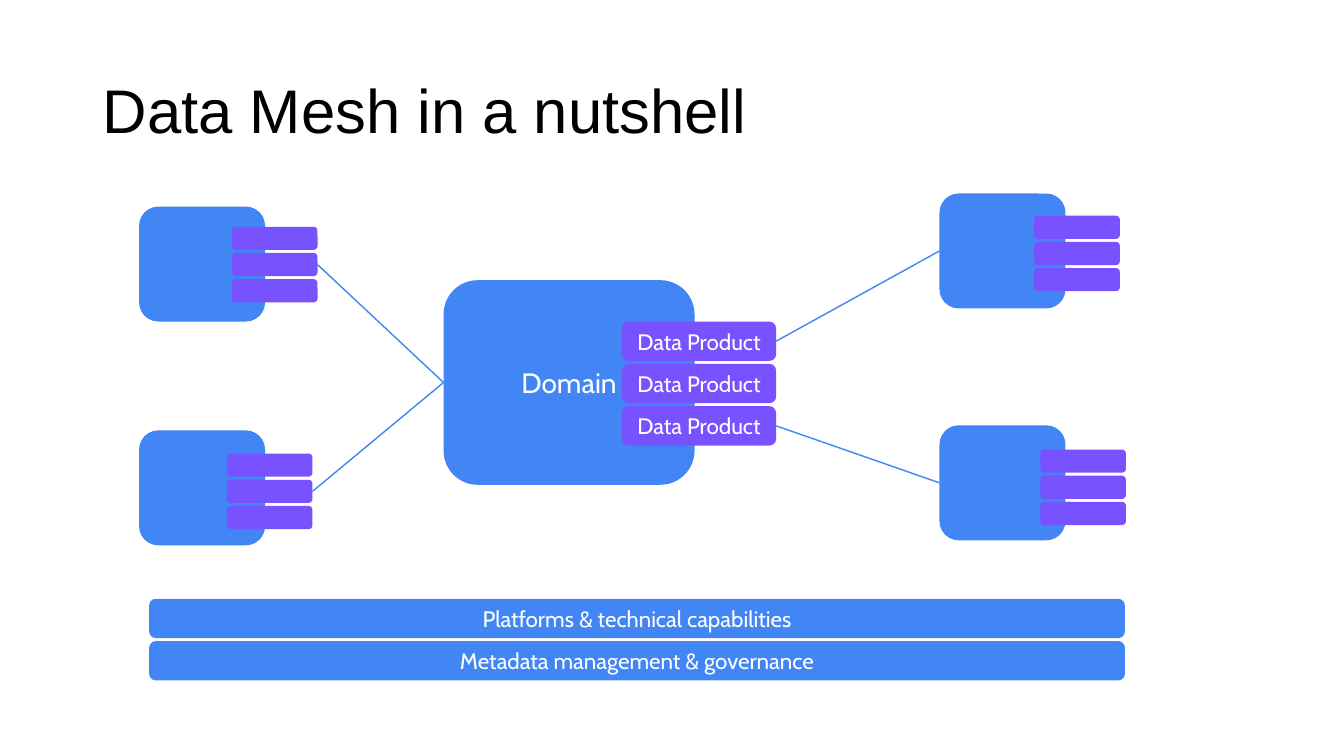
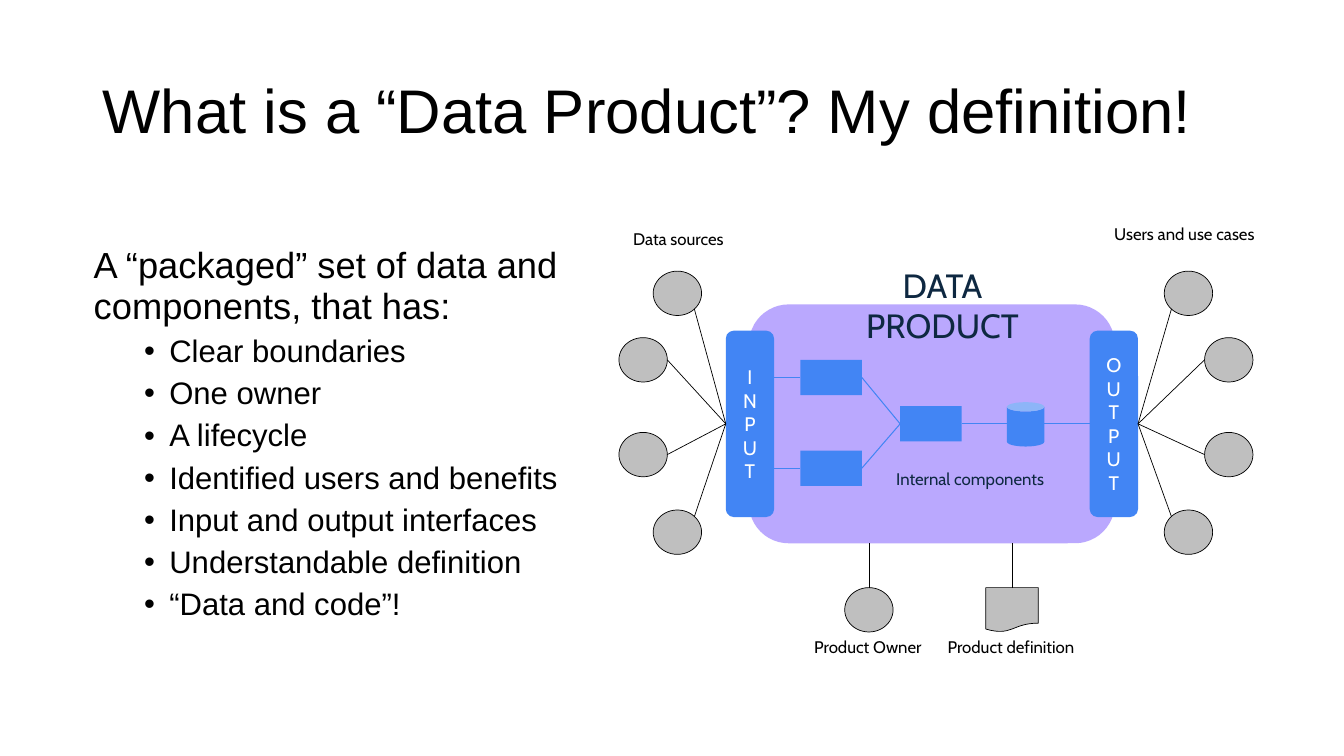
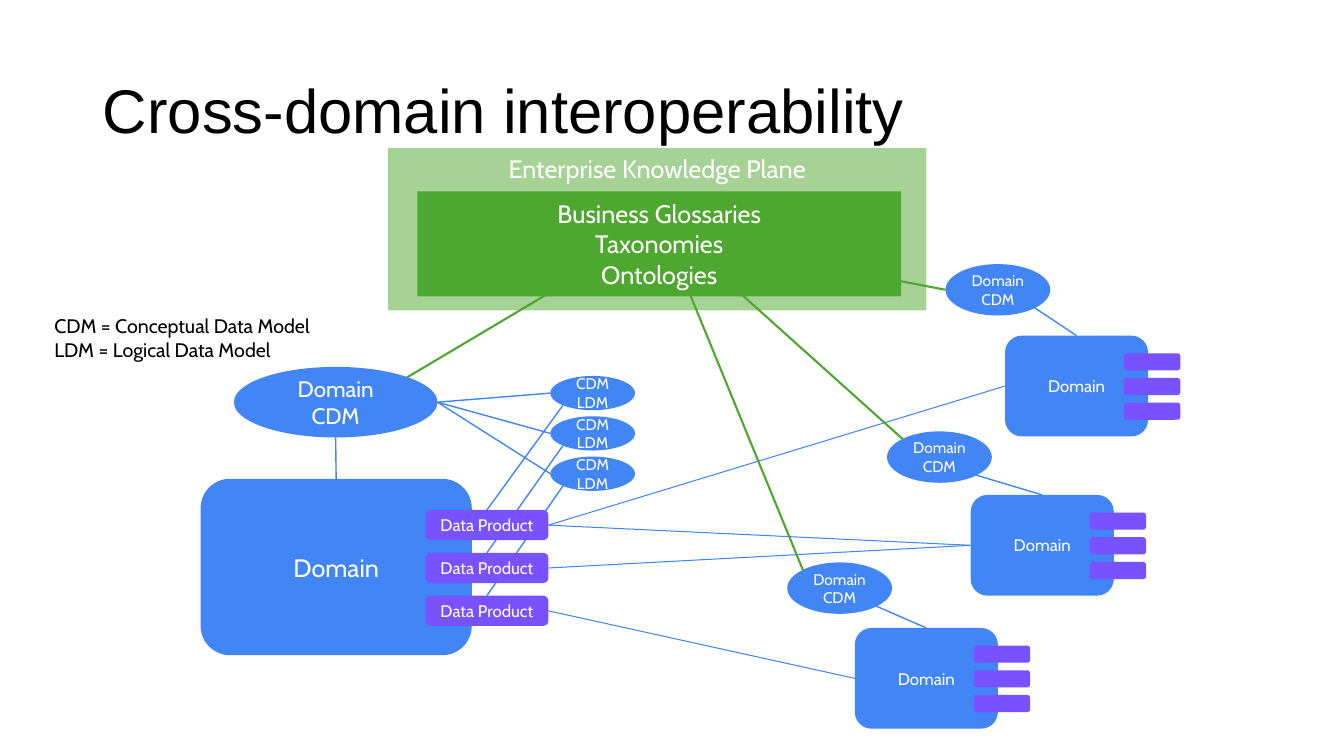
from typing import NamedTuple

from lxml.etree import SubElement
from pptx import Presentation
from pptx.dml.color import RGBColor
from pptx.enum.shapes import MSO_CONNECTOR, MSO_SHAPE as SHAPE
from pptx.enum.text import MSO_ANCHOR as ANCHOR, MSO_AUTO_SIZE as AUTO_SIZE, PP_ALIGN as ALIGN
from pptx.oxml.ns import qn
from pptx.util import Inches, Pt

COLORS = {
    "blue": "4285F4", "purple": "7752FE", "green": "4EA72E", "gray": "BFBFBF",
    "navy": "0E2841", "black": "000000", "white": "FFFFFF",
}
HEADING_FONT, LABEL_FONT = "Arial", "Cabin"
GRID = Inches(0.1)
COLUMNS, ROWS = 133.33, 75
NEAR, FAR = 0.15, 0.85
TITLE_LAYOUT, CONTENT_LAYOUT = 5, 1


def grid(cells):
    return round(cells * GRID)


class Box(NamedTuple):
    left: float
    top: float
    width: float
    height: float

    def at(self, x, y):
        return self.left + x * self.width, self.top + y * self.height

    def rows(self, count, gap):
        height = (self.height - gap * (count - 1)) / count
        return [Box(self.left, self.top + i * (height + gap), self.width, height)
                for i in range(count)]

    def offset(self, left, top, width, height):
        return Box(self.left + left, self.top + top, width, height)

    def emu(self):
        return [grid(value) for value in self]


TITLE_BOX = Box(9.2, 4, 115, 14.5)


def rgb(name):
    return RGBColor.from_string(COLORS[name])


def set_bullet(paragraph, bullet, margin, indent):
    properties = paragraph._p.get_or_add_pPr()
    properties.set("marL", str(grid(margin)))
    properties.set("indent", str(grid(indent)))
    if bullet:
        SubElement(properties, qn("a:buChar")).set("char", bullet)
    else:
        SubElement(properties, qn("a:buNone"))


def write(paragraph, text, size=12, color="white", font=LABEL_FONT,
          align=ALIGN.CENTER, spacing=1.0, before=0):
    paragraph.alignment = align
    paragraph.line_spacing = spacing
    paragraph.space_before = Pt(before)
    run = paragraph.add_run()
    run.text = text
    run.font.size = Pt(size)
    run.font.name = font
    run.font.color.rgb = rgb(color)


def fill_frame(frame, text, anchor=ANCHOR.MIDDLE, **text_format):
    frame.word_wrap = True
    frame.auto_size = AUTO_SIZE.NONE
    frame.vertical_anchor = anchor
    for index, line in enumerate(text.split("\n")):
        paragraph = frame.add_paragraph() if index else frame.paragraphs[0]
        write(paragraph, line, **text_format)


def draw(shapes, kind, box, fill, text="", outline=None, opacity=None, **text_format):
    shape = shapes.add_shape(kind, *box.emu())
    shape.shadow.inherit = False
    shape.fill.solid()
    shape.fill.fore_color.rgb = rgb(fill)
    if opacity:
        color = shape._element.spPr.find(qn("a:solidFill"))[0]
        SubElement(color, qn("a:alpha")).set("val", str(opacity * 1000))
    if outline:
        shape.line.color.rgb = rgb(outline)
        shape.line.width = Pt(0.5)
    else:
        shape.line.fill.background()
    if text:
        fill_frame(shape.text_frame, text, **text_format)
    return shape


def label(shapes, box, text, **text_format):
    frame = shapes.add_textbox(*box.emu()).text_frame
    fill_frame(frame, text, anchor=ANCHOR.TOP, **text_format)


def link(shapes, start, end, color="blue", width=1):
    ends = [grid(value) for value in (*start, *end)]
    connector = shapes.add_connector(MSO_CONNECTOR.STRAIGHT, *ends)
    connector.line.color.rgb = rgb(color)
    connector.line.width = Pt(width)
    SubElement(connector._element.spPr, qn("a:effectLst"))


def titled_slide(presentation, title, layout=TITLE_LAYOUT):
    slide = presentation.slides.add_slide(presentation.slide_layouts[layout])
    shape = slide.shapes.title
    shape.left, shape.top, shape.width, shape.height = TITLE_BOX.emu()
    fill_frame(shape.text_frame, title, size=44, color="black", font=HEADING_FONT,
               align=ALIGN.LEFT, spacing=0.9)
    return slide


def domain(shapes, box, products, text="", size=12, product_text="", product_size=12):
    draw(shapes, SHAPE.ROUNDED_RECTANGLE, box, "blue", text, size=size)
    for product in products:
        draw(shapes, SHAPE.ROUNDED_RECTANGLE, product, "purple", product_text,
             size=product_size)


def mesh_slide(presentation):
    shapes = titled_slide(presentation, "Data Mesh in a nutshell").shapes
    center = Box(44, 27.8, 24.9, 20.3)
    center_products = Box(61.7, 31.9, 15.3, 12.3).rows(3, 0.3)
    domain(shapes, center, center_products, "Domain", 20, "Data Product", 16)

    neighbors = [
        (13.8, 20.5, 9.2, 2), (13.8, 42.7, 8.7, 2.3),
        (93.2, 19.2, 9.4, 2.2), (93.2, 42.2, 10, 2.4),
    ]
    boxes, stacks = [], []
    for left, top, shift, drop in neighbors:
        box = Box(left, top, 12.5, 11.4)
        stack = box.offset(shift, drop, 8.5, 7.5).rows(3, 0.3)
        domain(shapes, box, stack)
        boxes.append(box)
        stacks.append(stack)
    for stack in stacks[:2]:
        link(shapes, stack[1].at(1, 0.5), center.at(0, 0.5))
    for product, box in zip(center_products[::2], boxes[2:]):
        link(shapes, product.at(1, 0.5), box.at(0, 0.5))

    foundations = ["Platforms & technical capabilities", "Metadata management & governance"]
    for row, text in zip(Box(14.8, 59.4, 96.8, 8.1).rows(2, 0.3), foundations):
        draw(shapes, SHAPE.ROUNDED_RECTANGLE, row, "blue", text, size=16)


def definition_text(slide, box):
    body = slide.placeholders[1]
    body.left, body.top, body.width, body.height = box.emu()
    frame = body.text_frame
    frame.word_wrap = True
    frame.auto_size = AUTO_SIZE.NONE
    shared = dict(color="black", font=HEADING_FONT, align=ALIGN.LEFT, spacing=0.94)
    intro = frame.paragraphs[0]
    set_bullet(intro, None, 0, 0)
    write(intro, "A “packaged” set of data and components, that has:", size=25.9, **shared)
    for item in ["Clear boundaries", "One owner", "A lifecycle",
                 "Identified users and benefits", "Input and output interfaces",
                 "Understandable definition", "“Data and code”!"]:
        paragraph = frame.add_paragraph()
        paragraph.level = 1
        set_bullet(paragraph, "•", 7.5, -2.5)
        write(paragraph, item, size=22.2, before=5, **shared)


def circle_fan(shapes, box, hub, hub_on_right):
    inner, outer = box.width - 4.8, 0
    if not hub_on_right:
        inner, outer = outer, inner
    side = 1 if hub_on_right else 0
    corner = FAR if hub_on_right else NEAR
    for left, top, anchor in [(inner, 0, (corner, FAR)), (outer, 6.6, (side, 0.5)),
                              (outer, 16, (side, 0.5)), (inner, 23.7, (corner, NEAR))]:
        circle = box.offset(left, top, 4.8, 4.4)
        draw(shapes, SHAPE.OVAL, circle, "gray", outline="black")
        link(shapes, hub, circle.at(*anchor), "black", 0.5)


def product_core(shapes, box):
    draw(shapes, SHAPE.ROUNDED_RECTANGLE, box, "purple", opacity=50)
    label(shapes, box.offset(6.6, -4.4, 25.2, 5), "DATA PRODUCT", size=24, color="navy")
    ports = [box.offset(left, 2.6, 4.8, 18.5) for left in (-2.3, 33.8)]
    for port, text in zip(ports, ["INPUT", "OUTPUT"]):
        shape = draw(shapes, SHAPE.ROUNDED_RECTANGLE, port, "blue", text, size=14)
        shape._element.txBody.bodyPr.set("vert", "wordArtVert")

    steps = [box.offset(left, top, 6.1, 3.5) for left, top in
             [(5.1, 5.5), (5.1, 14.5), (15, 10.1)]]
    for step in steps:
        draw(shapes, SHAPE.RECTANGLE, step, "blue")
    merge = steps[2]
    store = box.offset(25.6, 9.7, 3.7, 4.4)
    draw(shapes, SHAPE.CAN, store, "blue")
    for step in steps[:2]:
        left, middle = step.at(0, 0.5)
        link(shapes, (ports[0].at(1, 0)[0], middle), (left, middle), width=0.75)
        link(shapes, step.at(1, 0.5), merge.at(0, 0.5), width=0.75)
    middle = merge.at(0, 0.5)[1]
    for start, end in [(merge, store), (store, ports[1])]:
        link(shapes, (start.at(1, 0)[0], middle), (end.left, middle), width=0.75)
    label(shapes, box.offset(13.1, 15.8, 17.7, 3), "Internal components", color="navy")

    for kind, left, width, text, text_left in [
            (SHAPE.OVAL, 9.5, 4.8, "Product Owner", 3.7),
            (SHAPE.FLOWCHART_DOCUMENT, 23.5, 5.2, "Product definition", 17.9)]:
        symbol = box.offset(left, 28.1, width, 4.4)
        draw(shapes, kind, symbol, "gray", outline="black")
        x, y = symbol.at(0.5, 0)
        link(shapes, (x, box.at(0, 1)[1]), (x, y), "black", 0.5)
        label(shapes, box.offset(text_left, 32.5, 16.2, 3), text, color="black")
    return ports


def definition_slide(presentation):
    slide = titled_slide(presentation, "What is a “Data Product”? My definition!",
                         CONTENT_LAYOUT)
    definition_text(slide, Box(8.3, 23.9, 49.2, 39.4))
    source_port, user_port = product_core(slide.shapes, Box(74.3, 30.2, 36.3, 23.7))
    circle_fan(slide.shapes, Box(61.4, 26.9, 8.2, 28.1), source_port.at(0, 0.5), True)
    circle_fan(slide.shapes, Box(115.5, 26.9, 8.8, 28.1), user_port.at(1, 0.5), False)
    label(slide.shapes, Box(59.2, 22.2, 16.2, 3), "Data sources", color="black")
    label(slide.shapes, Box(109.4, 21.7, 16.2, 5), "Users and use cases", color="black")


def main_domain(shapes, box, models, model):
    products = box.offset(22.3, 3.1, 12.2, 11.5).rows(3, 1.25)
    for small_model, product in zip(models, products):
        link(shapes, small_model.at(NEAR, FAR), product.at(0.5, 0))
    domain(shapes, box, products, "Domain", 18, "Data Product", 12)
    draw(shapes, SHAPE.OVAL, model, "blue", "Domain\nCDM", size=16)
    link(shapes, model.at(0.5, 1), box.at(0.5, 0))
    for small_model in models:
        draw(shapes, SHAPE.OVAL, small_model, "blue", "CDM\nLDM", size=11)
        link(shapes, small_model.at(0, 0.5), model.at(1, 0.5))
    return products


def remote_domain(shapes, box, model):
    group = shapes.add_group_shape()
    domain(group.shapes, box, box.offset(11.8, 1.75, 5.6, 6.6).rows(3, 0.75), "Domain")
    draw(shapes, SHAPE.OVAL, model, "blue", "Domain\nCDM", size=11)
    link(shapes, model.at(FAR, FAR), box.at(0.5, 0))


def interoperability_slide(presentation):
    shapes = titled_slide(presentation, "Cross-domain interoperability").shapes
    plane = Box(38.5, 14.7, 53.4, 16.1)
    draw(shapes, SHAPE.RECTANGLE, plane, "green", "Enterprise Knowledge Plane",
         opacity=50, anchor=ANCHOR.TOP, size=18)

    main_model = Box(23.2, 36.4, 20.2, 7)
    small_models = Box(54.6, 37.3, 8.4, 11.4).rows(3, 0.6)
    products = main_domain(shapes, Box(19.9, 47.5, 26.9, 17.5), small_models, main_model)
    label(shapes, Box(4.4, 30.7, 28.7, 5.7),
          "CDM = Conceptual Data Model\nLDM = Logical Data Model",
          size=14, color="black", align=ALIGN.LEFT)

    remotes = [Box(left, top, 14.2, 10) for left, top in
               [(99.7, 33.3), (96.3, 49.1), (84.8, 62.3)]]
    models = [Box(left, top, 10.4, 5.1) for left, top in
              [(93.8, 26.2), (88, 42.8), (78.1, 55.8)]]
    for box, model in zip(remotes, models):
        remote_domain(shapes, box, model)
    for remote, product in [(0, 0), (1, 0), (1, 1), (2, 2)]:
        link(shapes, remotes[remote].at(0, 0.5), products[product].at(1, 0.5), width=0.75)

    knowledge = plane.offset(2.9, 4.3, 48, 10.4)
    draw(shapes, SHAPE.RECTANGLE, knowledge, "green",
         "Business Glossaries\nTaxonomies\nOntologies", size=18)
    for start, end in [((0.29, 0.92), main_model.at(FAR, NEAR)),
                       ((0.56, 0.94), models[2].at(NEAR, NEAR)),
                       ((0.66, 0.94), models[1].at(NEAR, NEAR)),
                       ((0.97, 0.83), models[0].at(0, 0.5))]:
        link(shapes, knowledge.at(*start), end, "green", 1.5)


def main():
    presentation = Presentation()
    presentation.slide_width, presentation.slide_height = grid(COLUMNS), grid(ROWS)
    mesh_slide(presentation)
    definition_slide(presentation)
    interoperability_slide(presentation)
    presentation.save("out.pptx")


if __name__ == "__main__":
    main()
